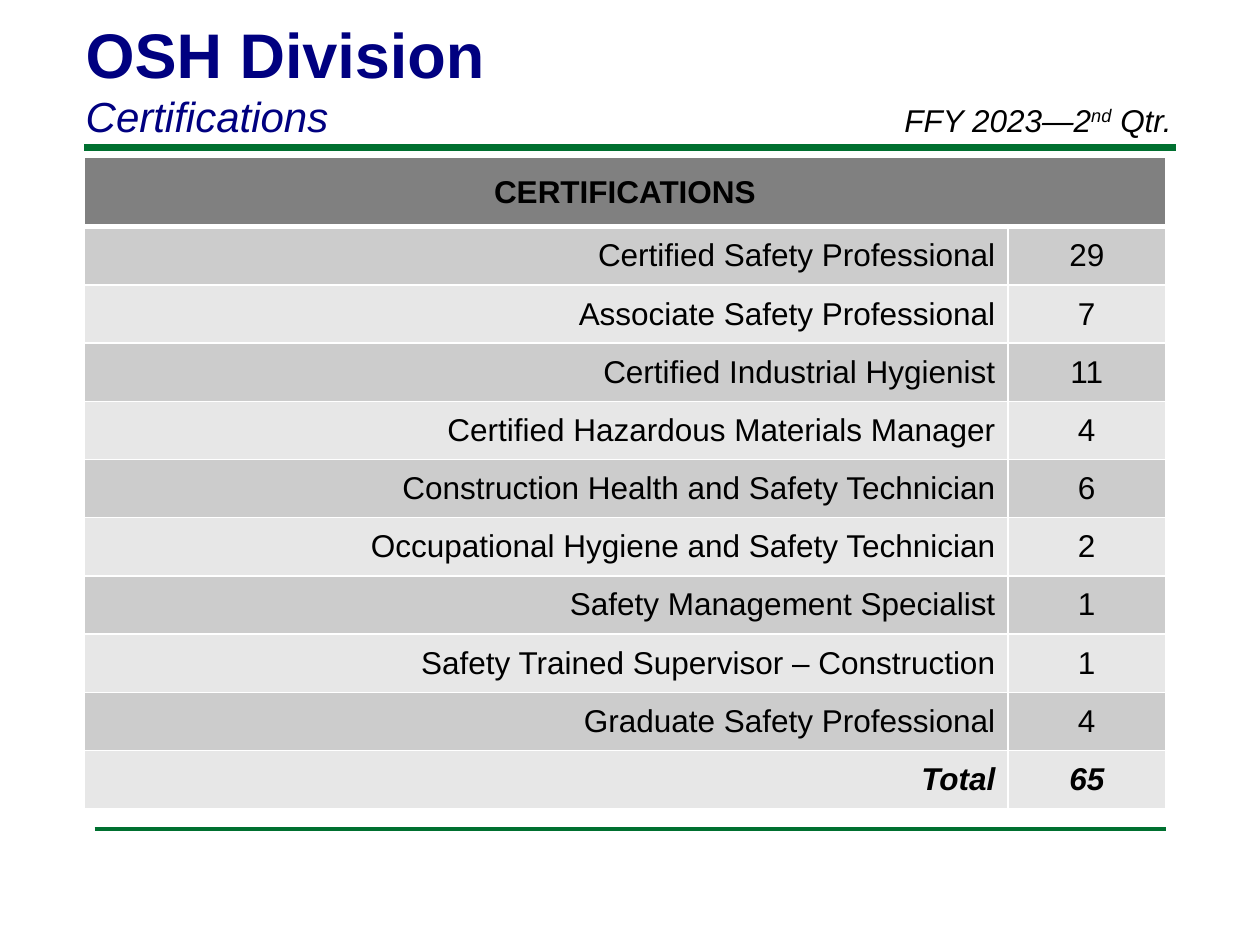
"""Build the OSH Division certifications slide."""
from lxml import etree
from pptx import Presentation
from pptx.dml.color import RGBColor
from pptx.enum.shapes import MSO_CONNECTOR
from pptx.enum.text import MSO_ANCHOR, MSO_AUTO_SIZE, PP_ALIGN
from pptx.oxml.ns import qn
from pptx.util import Inches, Pt

STRAIGHT = MSO_CONNECTOR.STRAIGHT
LEFT, CENTER, RIGHT = PP_ALIGN.LEFT, PP_ALIGN.CENTER, PP_ALIGN.RIGHT
MIDDLE, BOTTOM = MSO_ANCHOR.MIDDLE, MSO_ANCHOR.BOTTOM
NO_FIT = MSO_AUTO_SIZE.NONE

GREEN = RGBColor(0x00, 0x70, 0x30)
NAVY = RGBColor(0x00, 0x00, 0x80)
BLACK = RGBColor(0x00, 0x00, 0x00)
HEADER_GRAY = RGBColor(0x80, 0x80, 0x80)
BAND_GRAYS = (RGBColor(0xCC, 0xCC, 0xCC), RGBColor(0xE7, 0xE7, 0xE7))

TITLE_LINES = [
    ("OSH Division", {"size": Pt(36), "bold": True, "italic": False}),
    ("Certifications", {"size": Pt(24), "bold": False, "italic": True}),
]
PERIOD = [("FFY 2023—2", 0), ("nd", 30000), (" Qtr.", 0)]
HEADING = "CERTIFICATIONS"
CERTIFICATIONS = [
    ("Certified Safety Professional", "29"),
    ("Associate Safety Professional", "7"),
    ("Certified Industrial Hygienist", "11"),
    ("Certified Hazardous Materials Manager", "4"),
    ("Construction Health and Safety Technician", "6"),
    ("Occupational Hygiene and Safety Technician", "2"),
    ("Safety Management Specialist", "1"),
    ("Safety Trained Supervisor – Construction", "1"),
    ("Graduate Safety Professional", "4"),
    ("Total", "65"),
]
RULES = [(0.67, 9.33, 1.17, 4), (0.75, 9.25, 6.58, 2)]
TABLE_AREA = (0.67, 1.25, 8.58, 5.17)
COLUMN_WIDTHS = (7.33, 1.25)
HEADER_HEIGHT = 0.55


def add_span(para, text, color, **formats):
    span = para.add_run()
    span.text = text
    span.font.color.rgb = color
    for name, value in {"name": "Arial", "size": Pt(18), **formats}.items():
        setattr(span.font, name, value)
    return span


def add_rule(page, start, end, top, width):
    rule = page.shapes.add_connector(
        STRAIGHT, Inches(start), Inches(top), Inches(end), Inches(top))
    rule.line.color.rgb = GREEN
    rule.line.width = Pt(width)
    etree.SubElement(rule._element.spPr, qn("a:effectLst"))


def add_title(page):
    title = page.shapes.title
    title.left, title.top, title.width, title.height = map(
        Inches, (0.58, 0.06, 8.25, 1.11))
    frame = title.text_frame
    frame.auto_size = NO_FIT
    frame.vertical_anchor = BOTTOM
    for index, (text, formats) in enumerate(TITLE_LINES):
        para = frame.add_paragraph() if index else frame.paragraphs[0]
        para.alignment = LEFT
        add_span(para, text, NAVY, **formats)


def add_period(page):
    box = page.shapes.add_textbox(*map(Inches, (7.08, 0.75, 2.5, 0.4)))
    box.text_frame.word_wrap = True
    for text, baseline in PERIOD:
        span = add_span(box.text_frame.paragraphs[0], text, BLACK, italic=True)
        if baseline:
            span._r.get_or_add_rPr().set("baseline", str(baseline))


def set_borders(cell, top, bottom):
    properties = cell._tc.get_or_add_tcPr()
    for side, width in (("L", 1), ("R", 1), ("T", top), ("B", bottom)):
        line = etree.SubElement(properties, qn(f"a:ln{side}"), w=str(Pt(width)))
        fill = etree.SubElement(line, qn("a:solidFill"))
        etree.SubElement(fill, qn("a:srgbClr"), val="FFFFFF")


def fill_cell(cell, text, alignment, color, **formats):
    cell.fill.solid()
    cell.fill.fore_color.rgb = color
    cell.vertical_anchor = MIDDLE
    para = cell.text_frame.paragraphs[0]
    para.alignment = alignment
    if text:
        add_span(para, text, BLACK, **formats)


def add_certifications(page):
    count = len(CERTIFICATIONS)
    table = page.shapes.add_table(
        count + 1, len(COLUMN_WIDTHS), *map(Inches, TABLE_AREA)).table
    for column, width in zip(table.columns, COLUMN_WIDTHS):
        column.width = Inches(width)
    row_height = (TABLE_AREA[3] - HEADER_HEIGHT) / count
    for index, row in enumerate(table.rows):
        row.height = Inches(row_height if index else HEADER_HEIGHT)
        for cell in row.cells:
            set_borders(cell, 3 if index == 1 else 1, 1 if index else 3)

    table.cell(0, 0).merge(table.cell(0, 1))
    for cell, text in zip(table.rows[0].cells, (HEADING, "")):
        fill_cell(cell, text, CENTER, HEADER_GRAY, bold=True)
    for index, values in enumerate(CERTIFICATIONS):
        is_total = index == count - 1
        cells = table.rows[index + 1].cells
        for cell, text, alignment in zip(cells, values, (RIGHT, CENTER)):
            fill_cell(cell, text, alignment, BAND_GRAYS[index % 2],
                      bold=is_total, italic=is_total)


def main():
    deck = Presentation()
    deck.slide_width, deck.slide_height = Inches(10), Inches(7.5)
    page = deck.slides.add_slide(deck.slide_layouts.get_by_name("Title Only"))
    for rule in RULES:
        add_rule(page, *rule)
    add_title(page)
    add_period(page)
    add_certifications(page)
    deck.save("out.pptx")


if __name__ == "__main__":
    main()
